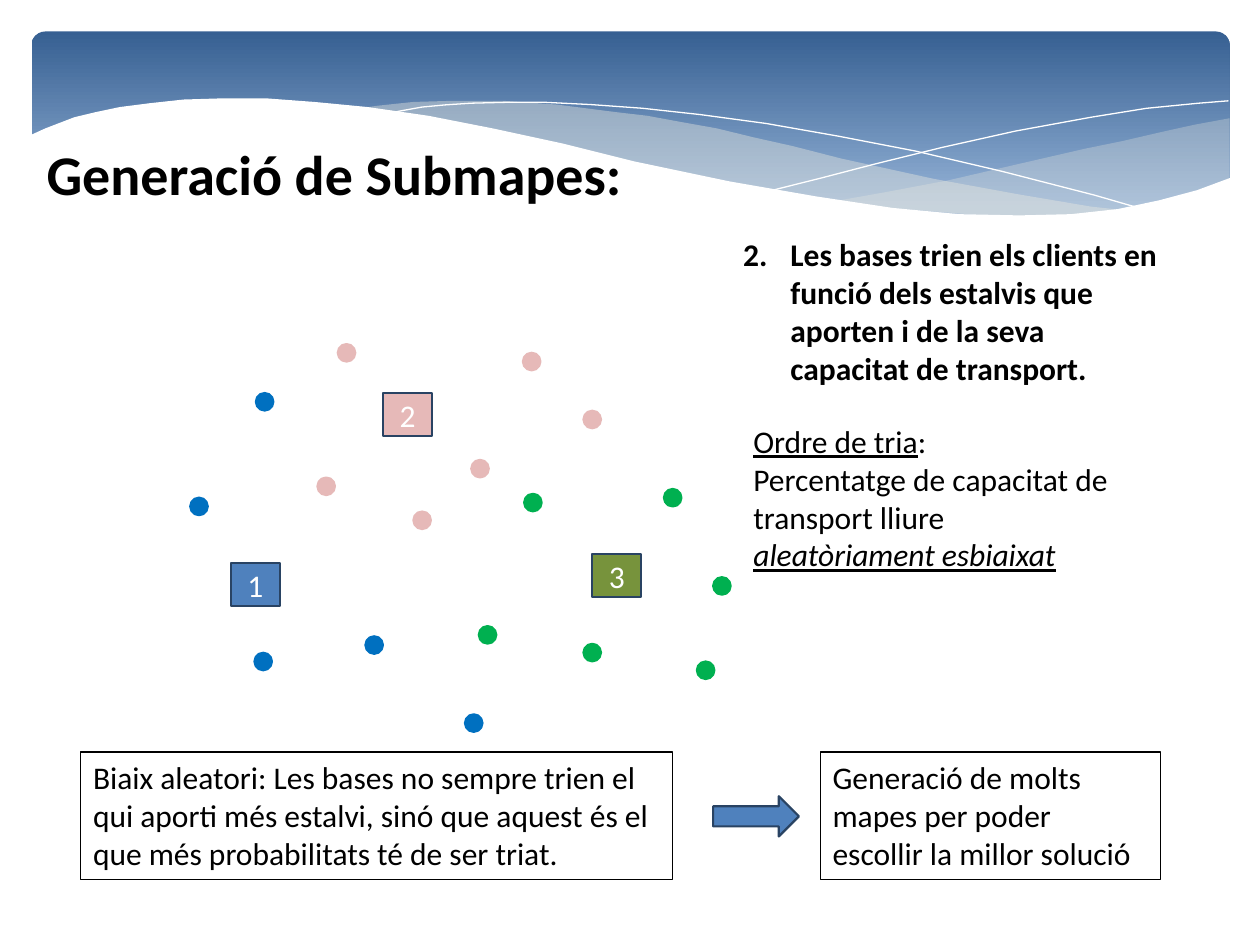
from lxml.etree import SubElement
from pptx import Presentation
from pptx.dml.color import RGBColor
from pptx.enum.shapes import MSO_SHAPE as SHAPE
from pptx.enum.text import MSO_ANCHOR as ANCHOR, MSO_AUTO_SIZE as FIT, PP_ALIGN as ALIGN
from pptx.oxml.ns import qn
from pptx.util import Pt


def paint(shape, fill=None, line=None, width=1.25, opacity=100):
    shape.shadow.inherit = False
    if fill:
        shape.fill.solid()
        shape.fill.fore_color.rgb = RGBColor.from_string(fill)
        if opacity < 100:
            color = shape.fill._xPr.find(qn("a:solidFill"))[0]
            SubElement(color, qn("a:alpha"), val=str(opacity * 1000))
    else:
        shape.fill.background()
    if line:
        shape.line.color.rgb = RGBColor.from_string(line)
        shape.line.width = Pt(width)
    else:
        shape.line.fill.background()


def write(shape, *paragraphs, size=18, color="000000", bold=False, align=ALIGN.LEFT,
          anchor=ANCHOR.TOP, wrap=True, fit=FIT.SHAPE_TO_FIT_TEXT):
    frame = shape.text_frame
    frame.word_wrap, frame.auto_size, frame.vertical_anchor = wrap, fit, anchor
    for index, runs in enumerate(paragraphs):
        paragraph = frame.add_paragraph() if index else frame.paragraphs[0]
        paragraph.alignment = align
        for text, style in runs:
            if text == "\n":
                paragraph.add_line_break()
                continue
            run = paragraph.add_run()
            run.text = text
            font = run.font
            font.name, font.size, font.bold = "Calibri", Pt(size), bold
            font.color.rgb = RGBColor.from_string(color)
            if "u" in style:
                font.underline = True
            if "i" in style:
                font.italic = True


deck = Presentation()
deck.slide_width, deck.slide_height = Pt(720), Pt(540)
slide = deck.slides.add_slide(deck.slide_layouts[5])
shapes = slide.shapes

BLUE, NAVY, PINK, WHITE = "4F81BD", "294363", "E6B9B8", "FFFFFF"

banner = shapes.add_shape(SHAPE.ROUNDED_RECTANGLE, Pt(18), Pt(18), Pt(684.7), Pt(112.3))
banner.adjustments[0] = 0.07
paint(banner)
banner.fill.gradient()
banner.fill.gradient_angle = 270
for stop, position, shade in zip(banner.fill.gradient_stops, (0, 0.9), ("376092", "95B3D7")):
    stop.position = position
    stop.color.rgb = RGBColor.from_string(shade)

right_veil = [
    (702, 67.7), (682.6, 71.3), (663.1, 75.6), (641.5, 80.6), (620, 85), (579.6, 94.3),
    (542.2, 103), (508.3, 109.4), (476, 115.2), (507.6, 118.8), (536.4, 121), (562.3, 123.1),
    (586, 123.8), (608, 123.1), (628, 121.3), (646, 118.8), (663, 115.2), (678, 110.9),
    (693.4, 105.8), (702.7, 102), (702.7, 67.7)]
long_veil = [
    (643, 120.2), (623.5, 118.1), (581, 110.9), (533.5, 102.2), (481, 90.7), (452.9, 83.5),
    (430.6, 78.5), (409.7, 73.4), (389.5, 69.8), (370, 66.2), (352, 64.1), (318.2, 59.8),
    (287.3, 57.6), (259.9, 57.6), (236.2, 58.3), (215.3, 60.5), (206, 61.9), (232.6, 64.8),
    (260.6, 69.8), (290.9, 76.3), (323.3, 83.5), (353.5, 90.7), (381.6, 97.2), (407.5, 103),
    (432.7, 108), (456.5, 112.3), (478.8, 116), (500.4, 118.8), (519.8, 121), (538.6, 122.4),
    (556.6, 123.5), (573, 124.6), (596, 124.6), (617, 123.5), (636.5, 121.7)]
falling_thread = [
    (222.5, 64.8), (229, 63.4), (241.2, 61.2), (254.2, 60), (269.3, 59), (288.7, 58.5),
    (311.8, 58.5), (337.7, 59.8), (367, 61.9), (400, 65.5), (437.8, 70.6), (478.8, 77.8),
    (523.4, 86.4), (572.4, 97.9), (625.7, 111.6), (653, 119.5)]
rising_thread = [
    (441.4, 108.7), (470.2, 101.5), (500.4, 93.6), (538.6, 84.2), (580.3, 74.9),
    (623.5, 67), (655.2, 61.9), (684.7, 59), (702, 57.6)]
white_wave = [
    (703.4, 101.5), (684, 108.7), (662.4, 114.5), (638.6, 119.5), (612, 122.4), (582.5, 123.1),
    (547.9, 122.4), (509.8, 118.8), (466.6, 112.3), (416.9, 103.7), (362.2, 92.2),
    (321.8, 82.1), (281.5, 73.4), (244.8, 66.2), (210.2, 61.2), (180, 58.3), (152, 56.2),
    (127.4, 56.2), (105, 56.9), (85.7, 59), (68.4, 61.2), (54.7, 64.1), (42.5, 67),
    (33.1, 70.6), (25.9, 73.4), (18, 77), (16.6, 77), (16.6, 161.3), (703.4, 161.3)]

for points, closed, look in (
        (right_veil, True, dict(fill="EEECE1", opacity=29)),
        (long_veil, True, dict(fill="EEECE1", opacity=40)),
        (falling_thread, False, dict(line=WHITE, width=0)),
        (rising_thread, False, dict(line=WHITE, width=0)),
        (white_wave, True, dict(fill=WHITE))):
    start, *rest = [(Pt(x), Pt(y)) for x, y in points]
    outline = shapes.build_freeform(*start)
    outline.add_line_segments(rest, close=closed)
    paint(outline.convert_to_shape(), **look)

for number, left, top, fill in (("1", 131.8, 321.8, BLUE), ("2", 218.9, 224.6, PINK),
                                ("3", 338.4, 316.8, "77933C")):
    base = shapes.add_shape(SHAPE.RECTANGLE, Pt(left), Pt(top), Pt(28.1), Pt(24.5))
    paint(base, fill, NAVY)
    write(base, [(number, "")], color=WHITE, align=ALIGN.CENTER, anchor=ANCHOR.MIDDLE,
          fit=FIT.NONE)

clients = {
    "0070C0": [(108.7, 284.4), (146.2, 224.6), (208.8, 363.6), (145.4, 373), (265.7, 408.2)],
    PINK: [(298.8, 201.6), (181.4, 272.9), (236.2, 292.3), (333.4, 234.7), (269.3, 262.8),
           (193, 196.6)],
    "00B050": [(333.4, 367.9), (398.2, 378), (299.5, 282.2), (379.4, 279.4), (407.5, 329.8),
               (273.6, 357.8)],
}
for color, spots in clients.items():
    for left, top in spots:
        client = shapes.add_shape(SHAPE.OVAL, Pt(left), Pt(top), Pt(10), Pt(10))
        paint(client, color, color)

step = shapes.add_textbox(Pt(417.6), Pt(131), Pt(257), Pt(94.3))
write(step, [("Les bases trien els clients en funció dels estalvis que aporten i de la seva "
              "capacitat de transport.", "")], bold=True)
numbering = step.text_frame.paragraphs[0]._p.get_or_add_pPr()
numbering.set("marL", str(Pt(27)))
numbering.set("indent", str(-Pt(27)))
SubElement(numbering, qn("a:buFont"), typeface="+mj-lt")
SubElement(numbering, qn("a:buAutoNum"), type="arabicPeriod", startAt="2")

order = shapes.add_textbox(Pt(423.4), Pt(237.6), Pt(234), Pt(94.3))
write(order,
      [("Ordre de tria", "u"), (":", ""), ("\n", ""), ("Percentatge de capacitat de", ""),
       ("\n", ""), ("transport lliure", "")],
      [("aleatòriament esbiaixat", "iu")], wrap=False)

for left, width, text in (
        (46.1, 338.4, "Biaix aleatori: Les bases no sempre trien el qui aporti més estalvi, "
                      "sinó que aquest és el que més probabilitats té de ser triat."),
        (468.7, 194.4, "Generació de molts mapes per poder escollir la millor solució")):
    conclusion = shapes.add_textbox(Pt(left), Pt(429.8), Pt(width), Pt(72.7))
    paint(conclusion, line="000000", width=0.75)
    write(conclusion, [(text, "")])

arrow = shapes.add_shape(SHAPE.RIGHT_ARROW, Pt(407.5), Pt(455), Pt(49), Pt(23))
paint(arrow, BLUE, NAVY)

title = shapes.title
title.left, title.top, title.width, title.height = Pt(19.4), Pt(76.3), Pt(353.5), Pt(46)
write(title, [("Generació de Submapes:", "")], size=32, bold=True, wrap=False)
shapes._spTree.append(title._element)

deck.save("out.pptx")
